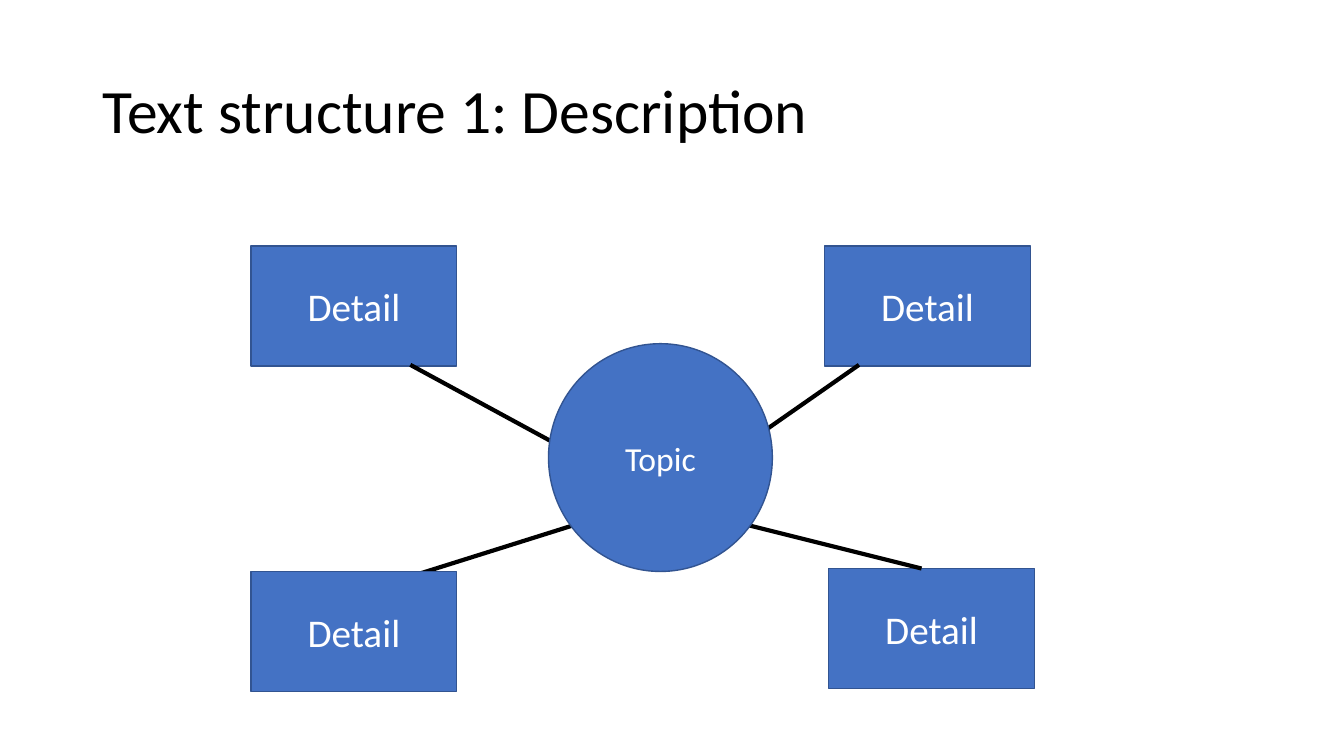
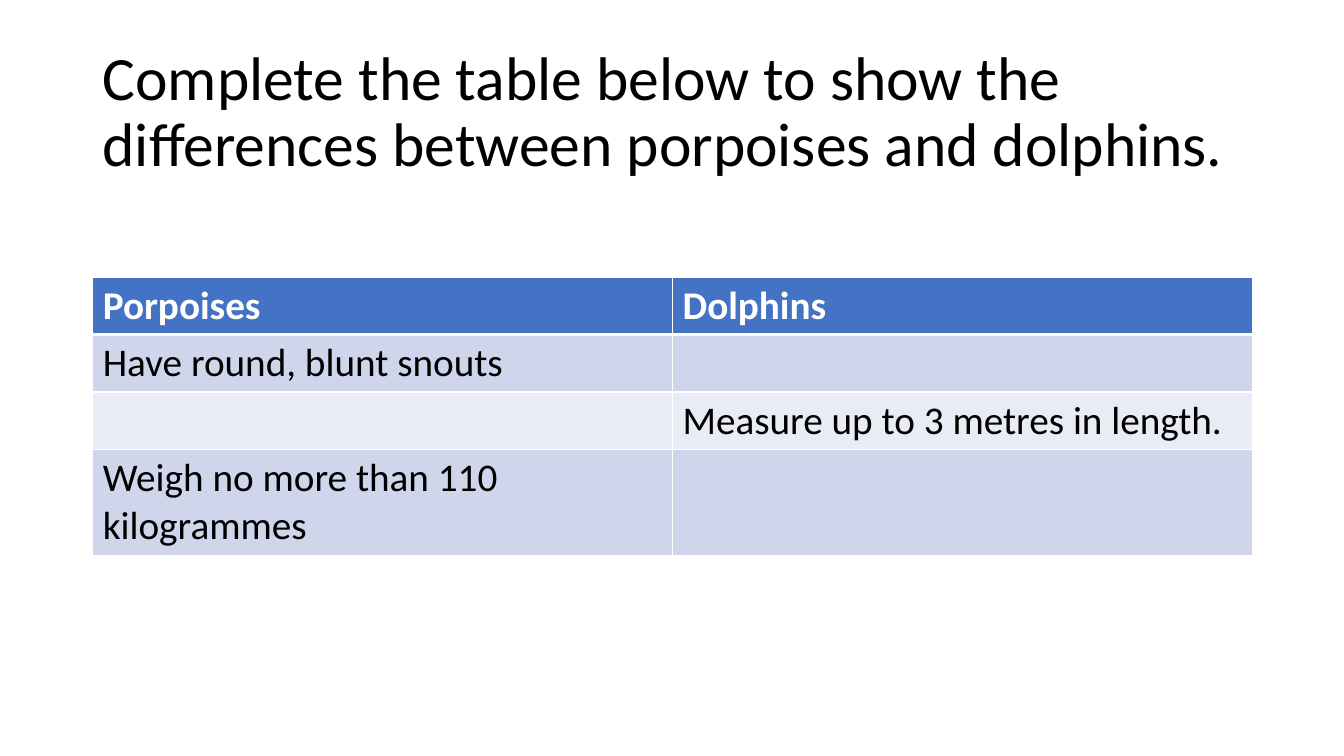
from dataclasses import dataclass

from lxml import etree
from pptx import Presentation
from pptx import util as u
from pptx.dml.color import RGBColor
from pptx.enum import shapes, text
from pptx.oxml import ns

PX = u.Inches(1) // 100


@dataclass(frozen=True)
class Theme:
    font: str = "Calibri"
    ink: str = "000000"
    paper: str = "FFFFFF"
    accent: str = "4472C4"
    outline: str = "325491"
    band_dark: str = "CFD5EA"
    band_light: str = "E9EBF5"
    title_size: int = 44
    body_size: int = 28
    topic_size: int = 24
    outline_width: int = 1
    link_width: int = 3


@dataclass(frozen=True)
class Frame:
    left: int
    top: int
    width: int
    height: int

    def emu(self) -> tuple[int, int, int, int]:
        return self.left * PX, self.top * PX, self.width * PX, self.height * PX


@dataclass(frozen=True)
class Detail:
    left: int
    top: int
    link_start: tuple[int, int]
    link_end: tuple[int, int]
    covers_link: bool = False


THEME = Theme()
PAGE_WIDTH, PAGE_HEIGHT = 1333, 750
TITLE = Frame(92, 40, 1150, 145)
TOPIC = Frame(544, 341, 222, 226)
DETAIL_WIDTH, DETAIL_HEIGHT = 204, 119
DETAILS = (
    Detail(822, 564, (914, 564), (722, 516)),
    Detail(249, 567, (585, 516), (407, 572), covers_link=True),
    Detail(249, 244, (571, 451), (407, 362)),
    Detail(818, 244, (852, 362), (733, 445)),
)
TABLE = Frame(92, 275, 1150, 276)
ROW_HEIGHTS = (57, 57, 57, 105)
ROWS = (
    ("Porpoises", "Dolphins"),
    ("Have round, blunt snouts", ""),
    ("", "Measure up to 3 metres in length."),
    ("Weigh no more than 110 kilogrammes", ""),
)


def rgb(value: str) -> RGBColor:
    return RGBColor.from_string(value)


def add_span(para, words: str, size: int, color: str, bold: bool = False) -> None:
    span = para.add_run()
    span.text = words
    span.font.name = THEME.font
    span.font.size = u.Pt(size)
    span.font.bold = bold
    span.font.color.rgb = rgb(color)


def add_page(deck, title: str):
    page = deck.slides.add_slide(deck.slide_layouts[6])
    frame = page.shapes.add_textbox(*TITLE.emu()).text_frame
    frame.word_wrap = True
    frame.vertical_anchor = text.MSO_ANCHOR.MIDDLE
    para = frame.paragraphs[0]
    para.line_spacing = 0.9
    add_span(para, title, THEME.title_size, THEME.ink)
    return page


def add_node(page, kind: shapes.MSO_SHAPE, place: Frame, label: str, size: int) -> None:
    box = page.shapes.add_shape(kind, *place.emu())
    box.shadow.inherit = False
    box.fill.solid()
    box.fill.fore_color.rgb = rgb(THEME.accent)
    box.line.color.rgb = rgb(THEME.outline)
    box.line.width = u.Pt(THEME.outline_width)
    box.text_frame.word_wrap = True
    box.text_frame.vertical_anchor = text.MSO_ANCHOR.MIDDLE
    para = box.text_frame.paragraphs[0]
    para.alignment = text.PP_ALIGN.CENTER
    add_span(para, label, size, THEME.paper)


def add_link(page, start: tuple[int, int], end: tuple[int, int]) -> None:
    ends = [value * PX for value in start + end]
    link = page.shapes.add_connector(shapes.MSO_CONNECTOR.STRAIGHT, *ends)
    link.line.color.rgb = rgb(THEME.ink)
    link.line.width = u.Pt(THEME.link_width)
    etree.SubElement(link._element.spPr, ns.qn("a:effectLst"))


def add_detail(page, detail: Detail) -> None:
    place = Frame(detail.left, detail.top, DETAIL_WIDTH, DETAIL_HEIGHT)
    if detail.covers_link:
        add_link(page, detail.link_start, detail.link_end)
    add_node(page, shapes.MSO_SHAPE.RECTANGLE, place, "Detail", THEME.body_size)
    if not detail.covers_link:
        add_link(page, detail.link_start, detail.link_end)


def set_borders(cell, widths: dict[str, int]) -> None:
    properties = cell._tc.get_or_add_tcPr()
    for index, (side, width) in enumerate(widths.items()):
        border = etree.Element(ns.qn(f"a:ln{side}"), w=str(u.Pt(width)))
        fill = etree.SubElement(border, ns.qn("a:solidFill"))
        etree.SubElement(fill, ns.qn("a:srgbClr"), val=THEME.paper)
        properties.insert(index, border)


def add_comparison(page) -> None:
    table = page.shapes.add_table(len(ROWS), len(ROWS[0]), *TABLE.emu()).table
    table.horz_banding = False
    for row, height in zip(table.rows, ROW_HEIGHTS):
        row.height = height * PX
    for row_index, row in enumerate(ROWS):
        header = row_index == 0
        band = THEME.band_dark if row_index % 2 else THEME.band_light
        top = 3 if row_index == 1 else 1
        bottom = 3 if header else 1
        for column_index, words in enumerate(row):
            cell = table.cell(row_index, column_index)
            cell.fill.solid()
            cell.fill.fore_color.rgb = rgb(THEME.accent if header else band)
            set_borders(cell, {"L": 1, "R": 1, "T": top, "B": bottom})
            if words:
                color = THEME.paper if header else THEME.ink
                add_span(cell.text_frame.paragraphs[0], words, THEME.body_size, color, header)


def build_description(deck) -> None:
    page = add_page(deck, "Text structure 1: Description")
    for detail in DETAILS:
        add_detail(page, detail)
    add_node(page, shapes.MSO_SHAPE.OVAL, TOPIC, "Topic", THEME.topic_size)


def build_differences(deck) -> None:
    page = add_page(
        deck,
        "Complete the table below to show the differences between porpoises and dolphins.",
    )
    add_comparison(page)


def main() -> None:
    deck = Presentation()
    deck.slide_width = PAGE_WIDTH * PX
    deck.slide_height = PAGE_HEIGHT * PX
    build_description(deck)
    build_differences(deck)
    deck.save("out.pptx")


if __name__ == "__main__":
    main()
